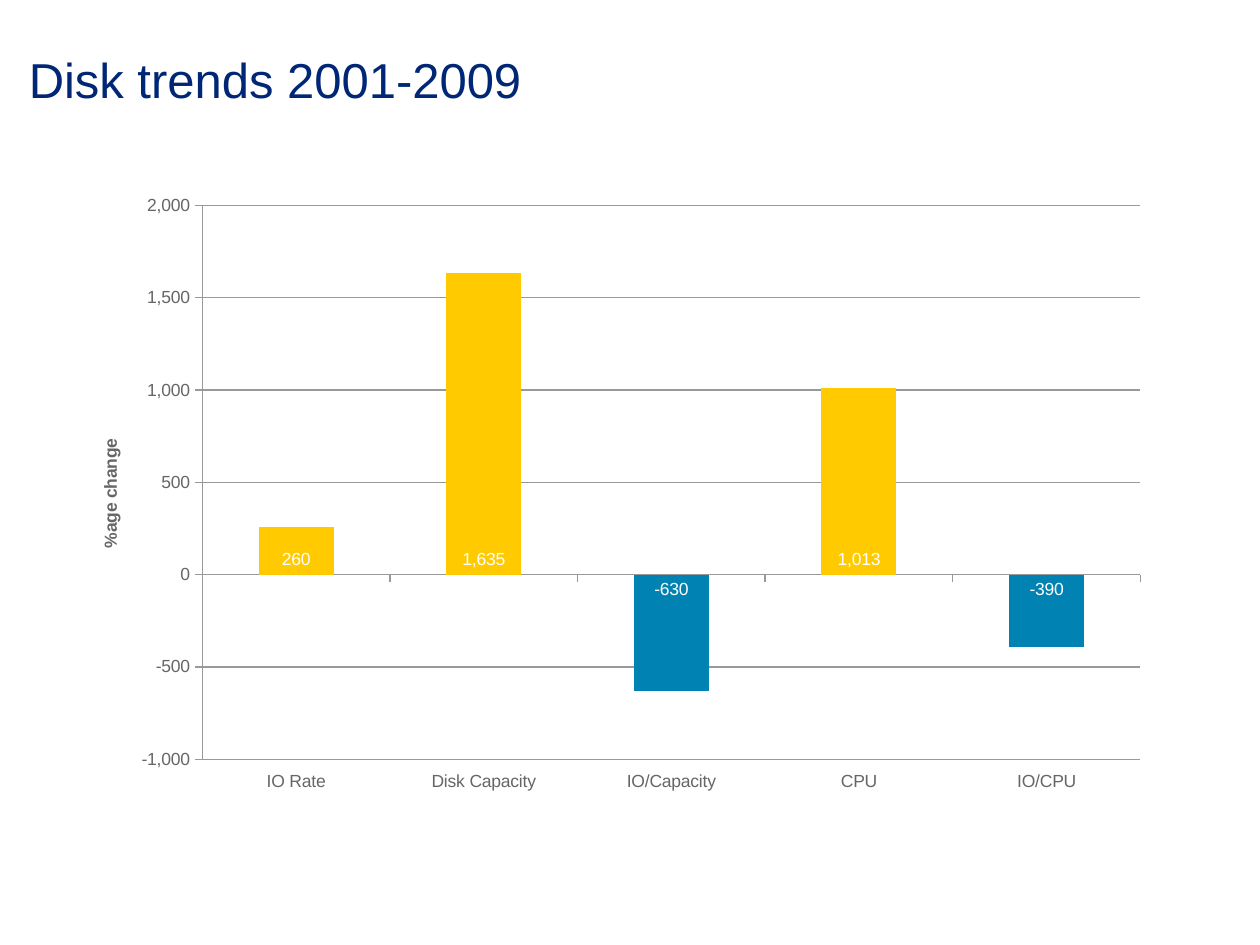
"""Build a slide charting the percentage change in disk trends."""
import dataclasses

import lxml.etree
import pptx
import pptx.chart.axis
import pptx.chart.chart
import pptx.chart.data
import pptx.dml.color
import pptx.enum.chart
import pptx.enum.text
import pptx.oxml
import pptx.oxml.ns
import pptx.slide
import pptx.text.text
import pptx.util
from pptx.util import Cm


@dataclasses.dataclass(frozen=True)
class Theme:
    """Colours, type sizes and font of the slide."""
    font: str = "Arial"
    title: str = "002776"
    text: str = "666666"
    line: str = "999999"
    rise: str = "FFCB00"
    fall: str = "0082B2"
    label: str = "FFFFFF"
    title_size: float = 28
    chart_size: float = 10


@dataclasses.dataclass(frozen=True)
class Trend:
    """One measure and its percentage change."""
    name: str
    change: int


THEME = Theme()
NUMBER_FORMAT = "#,##0"
TRENDS = (
    Trend("IO Rate", 260),
    Trend("Disk Capacity", 1635),
    Trend("IO/Capacity", -630),
    Trend("CPU", 1013),
    Trend("IO/CPU", -390),
)


def rgb(colour: str) -> pptx.dml.color.RGBColor:
    """Return a colour from its hexadecimal form."""
    return pptx.dml.color.RGBColor.from_string(colour)


def style_font(font: pptx.text.text.Font, size: float, colour: str, bold: bool = False) -> None:
    """Set the typeface, size, weight and colour of a font."""
    font.name = THEME.font
    font.size = pptx.util.Pt(size)
    font.bold = bold
    font.color.rgb = rgb(colour)


def add_title(slide: pptx.slide.Slide, text: str) -> None:
    """Fill and place the title placeholder."""
    title = slide.shapes.title
    title.left, title.top, title.width, title.height = Cm(0.58), Cm(0.84), Cm(21.59), Cm(1.5)
    frame = title.text_frame
    frame.text = text
    frame.margin_left = 0
    frame.word_wrap = False
    frame.auto_size = pptx.enum.text.MSO_AUTO_SIZE.NONE
    frame.vertical_anchor = pptx.enum.text.MSO_ANCHOR.MIDDLE
    paragraph = frame.paragraphs[0]
    paragraph.alignment = pptx.enum.text.PP_ALIGN.LEFT
    style_font(paragraph.font, THEME.title_size, THEME.title)


def set_plot_layout(chart: pptx.chart.chart.Chart, x: float, y: float, w: float, h: float) -> None:
    """Fix the inner plot area as fractions of the chart."""
    qn = pptx.oxml.ns.qn
    plot_area = chart.plots[0]._element.getparent()
    for layout in plot_area.findall(qn("c:layout")):
        plot_area.remove(layout)
    layout = pptx.oxml.parse_xml(f"<c:layout {pptx.oxml.ns.nsdecls('c')}><c:manualLayout/></c:layout>")
    settings = {"layoutTarget": "inner", "xMode": "edge", "yMode": "edge", "x": x, "y": y, "w": w, "h": h}
    for name, value in settings.items():
        lxml.etree.SubElement(layout[0], qn(f"c:{name}")).set("val", str(value))
    plot_area.insert(0, layout)


def style_axis(axis: pptx.chart.axis._BaseAxis) -> None:
    """Give an axis low labels, outside ticks and a thin line."""
    axis.tick_label_position = pptx.enum.chart.XL_TICK_LABEL_POSITION.LOW
    axis.major_tick_mark = pptx.enum.chart.XL_TICK_MARK.OUTSIDE
    axis.minor_tick_mark = pptx.enum.chart.XL_TICK_MARK.NONE
    axis.format.line.color.rgb = rgb(THEME.line)
    axis.format.line.width = pptx.util.Pt(0.75)
    style_font(axis.tick_labels.font, THEME.chart_size, THEME.text)


def style_value_axis(axis: pptx.chart.axis.ValueAxis, title: str) -> None:
    """Set the scale, gridlines, number format and title of the value axis."""
    style_axis(axis)
    axis.minimum_scale, axis.maximum_scale, axis.major_unit = -1000, 2000, 500
    axis.has_major_gridlines = True
    axis.major_gridlines.format.line.color.rgb = rgb(THEME.line)
    axis.major_gridlines.format.line.width = pptx.util.Pt(0.75)
    axis.tick_labels.number_format = NUMBER_FORMAT
    axis.tick_labels.number_format_is_linked = False
    frame = axis.axis_title.text_frame
    frame.text = title
    style_font(frame.paragraphs[0].font, THEME.chart_size, THEME.text, bold=True)


def style_columns(chart: pptx.chart.chart.Chart, trends: tuple[Trend, ...]) -> None:
    """Colour the columns by direction and label them at their base."""
    plot = chart.plots[0]
    plot.gap_width = 150
    plot.vary_by_categories = False
    series = plot.series[0]
    series.invert_if_negative = False
    series.format.fill.solid()
    series.format.fill.fore_color.rgb = rgb(THEME.rise)
    for index, trend in enumerate(trends):
        if trend.change < 0:
            fill = series.points[index].format.fill
            fill.solid()
            fill.fore_color.rgb = rgb(THEME.fall)
    labels = series.data_labels
    labels.show_value = True
    labels.position = pptx.enum.chart.XL_LABEL_POSITION.INSIDE_BASE
    labels.number_format = NUMBER_FORMAT
    labels.number_format_is_linked = False
    style_font(labels.font, THEME.chart_size, THEME.label)


def add_trend_chart(slide: pptx.slide.Slide, trends: tuple[Trend, ...]) -> None:
    """Add the column chart of the trends."""
    data = pptx.chart.data.CategoryChartData(number_format=NUMBER_FORMAT)
    data.categories = [trend.name for trend in trends]
    data.add_series("Series 1", [trend.change for trend in trends])
    chart = slide.shapes.add_chart(
        pptx.enum.chart.XL_CHART_TYPE.COLUMN_CLUSTERED,
        Cm(1.93), Cm(3.76), Cm(21.49), Cm(12.83), data,
    ).chart
    chart.has_title = False
    chart.has_legend = False
    style_font(chart.font, THEME.chart_size, THEME.text)
    set_plot_layout(chart, 0.1, 0.03, 0.88, 0.87)
    style_axis(chart.category_axis)
    style_value_axis(chart.value_axis, "%age change")
    style_columns(chart, trends)


def main() -> None:
    """Build and save the presentation."""
    presentation = pptx.Presentation()
    presentation.slide_width, presentation.slide_height = Cm(25.4), Cm(19.05)
    slide = presentation.slides.add_slide(presentation.slide_layouts[5])
    add_title(slide, "Disk trends 2001-2009")
    add_trend_chart(slide, TRENDS)
    presentation.save("out.pptx")


if __name__ == "__main__":
    main()
